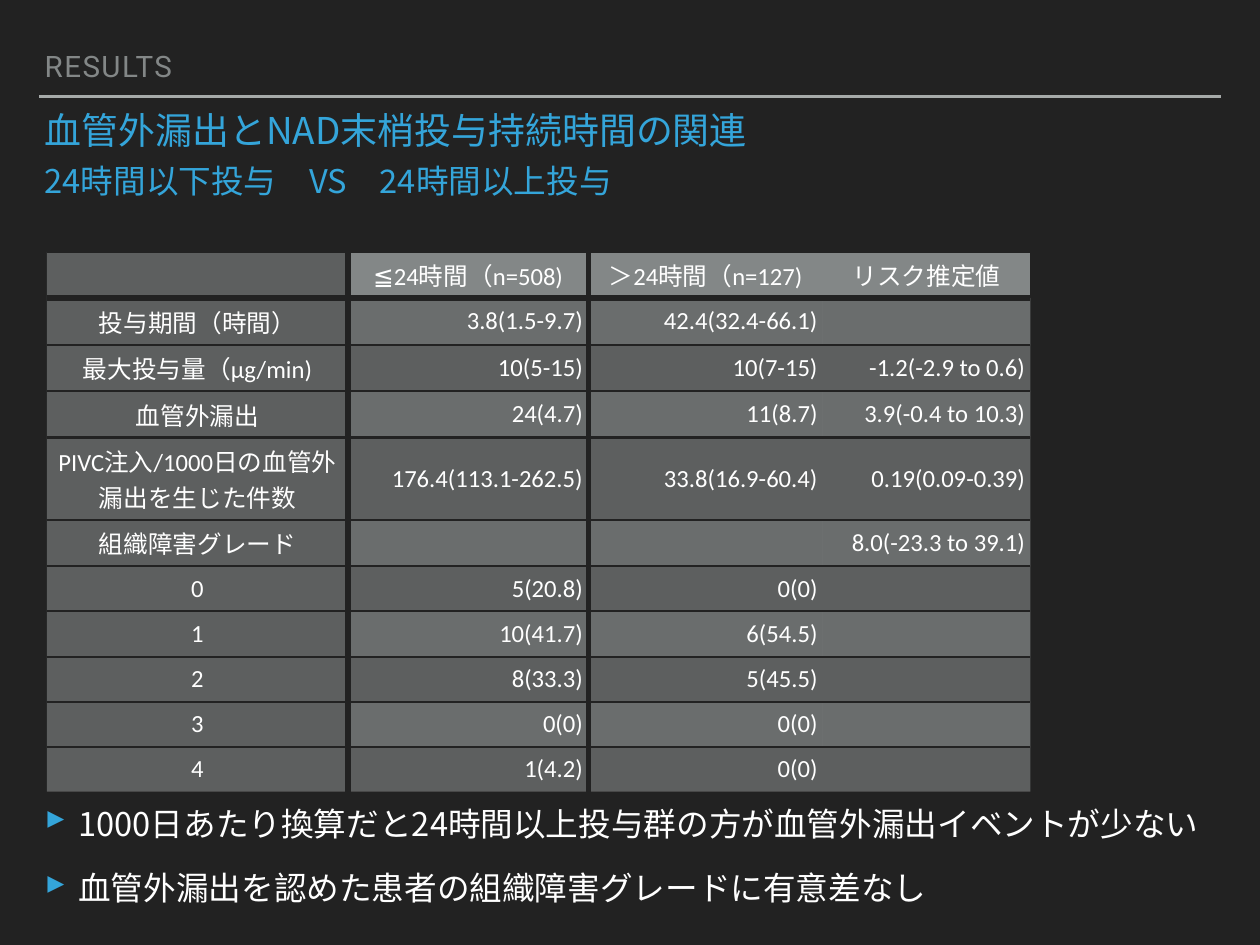
import dataclasses

import pptx
import pptx.dml.color
import pptx.enum.shapes
import pptx.enum.text
import pptx.oxml
import pptx.oxml.ns
import pptx.util
from lxml import etree

RGB = pptx.dml.color.RGBColor.from_string
Pt = pptx.util.Pt
qn = pptx.oxml.ns.qn
ALIGN = pptx.enum.text.PP_ALIGN
ANCHOR = pptx.enum.text.MSO_ANCHOR


@dataclasses.dataclass(frozen=True)
class Theme:
    """Colours, fonts and type sizes."""
    back: str = "222222"
    rule: str = "A6AAA9"
    grey: str = "838787"
    dark: str = "686A6A"
    blue: str = "34A5DA"
    white: str = "FFFFFF"
    sans: str = "Noto Sans CJK JP"
    label: str = "Roboto"
    data: str = "Calibri"
    head: float = 30
    body: float = 26.5
    small: float = 24
    cell: float = 20
    inset: float = 0.06


class Deck:
    """Draws elements on a slide grid of 32 columns by 24 rows."""

    def __init__(self, theme):
        """Open a deck with one title-only slide."""
        self.theme = theme
        self.prs = pptx.Presentation()
        self.prs.slide_width = pptx.util.Inches(14.22)
        self.prs.slide_height = pptx.util.Inches(10.67)
        self.slide = self.prs.slides.add_slide(self.prs.slide_layouts[5])
        fill = self.slide.background.fill
        fill.solid()
        fill.fore_color.rgb = RGB(theme.back)

    def x(self, cols):
        """Turn columns into a length."""
        return round(self.prs.slide_width * cols / 32)

    def y(self, rows):
        """Turn rows into a length."""
        return round(self.prs.slide_height * rows / 24)

    def box(self, col, row, wide, high):
        """Turn a grid area into left, top, width and height."""
        return self.x(col), self.y(row), self.x(wide), self.y(high)

    def style(self, para, size, color, face):
        """Set the font of a paragraph and return its properties."""
        font = para.font
        font.size, font.name = Pt(size), face
        font.color.rgb = RGB(color)
        props = para._p.get_or_add_pPr().find(qn("a:defRPr"))
        etree.SubElement(props, qn("a:ea"), typeface=self.theme.sans)
        return props

    def frame(self, shape, anchor):
        """Prepare the text frame of a shape."""
        frame = shape.text_frame
        frame.word_wrap = True
        frame.auto_size = pptx.enum.text.MSO_AUTO_SIZE.NONE
        frame.vertical_anchor = anchor
        inset = pptx.util.Inches(self.theme.inset)
        frame.margin_left = frame.margin_right = inset
        frame.margin_top = frame.margin_bottom = inset
        return frame

    def title(self, area, lines, sizes):
        """Place the title, one size for each line."""
        shape = self.slide.shapes.title
        shape.left, shape.top, shape.width, shape.height = self.box(*area)
        frame = self.frame(shape, ANCHOR.TOP)
        frame.text = "\n".join(lines)
        for para, size in zip(frame.paragraphs, sizes):
            para.alignment = ALIGN.LEFT
            para.line_spacing, para.space_before = 0.8, Pt(14)
            self.style(para, size, self.theme.blue, self.theme.sans)

    def label(self, area, text):
        """Add the section label."""
        shape = self.slide.shapes.add_textbox(*self.box(*area))
        para = self.frame(shape, ANCHOR.BOTTOM).paragraphs[0]
        para.text, para.line_spacing = text, 0.8
        props = self.style(para, self.theme.small, self.theme.grey, self.theme.label)
        props.set("spc", "120")

    def rule(self, start, end, row):
        """Add a horizontal rule."""
        line = self.slide.shapes.add_connector(
            pptx.enum.shapes.MSO_CONNECTOR.STRAIGHT,
            self.x(start), self.y(row), self.x(end), self.y(row))
        line.line.color.rgb, line.line.width = RGB(self.theme.rule), Pt(2)
        etree.SubElement(line._element.spPr, qn("a:effectLst"))

    def bullets(self, area, lines):
        """Add a bulleted list."""
        shape = self.slide.shapes.add_textbox(*self.box(*area))
        frame = self.frame(shape, ANCHOR.TOP)
        frame.text = "\n".join(lines)
        indent = pptx.util.Inches(0.38)
        for para in frame.paragraphs:
            para.space_before = Pt(21)
            font = self.style(para, self.theme.body, self.theme.white, self.theme.sans)
            props = para._p.pPr
            props.set("marL", str(indent))
            props.set("indent", str(-indent))
            color = etree.Element(qn("a:buClr"))
            etree.SubElement(color, qn("a:srgbClr"), val=self.theme.blue)
            font.addprevious(color)
            font.addprevious(etree.Element(qn("a:buSzPct"), val="105000"))
            font.addprevious(etree.Element(qn("a:buChar"), char="▸"))

    def edge(self, cell, sides):
        """Draw cell borders, given as widths by side in L, R, T, B order."""
        props = cell._tc.get_or_add_tcPr()
        for spot, (side, width) in enumerate(sides.items()):
            line = etree.Element(qn("a:ln" + side), w=str(Pt(width)))
            fill = etree.SubElement(line, qn("a:solidFill"))
            etree.SubElement(fill, qn("a:srgbClr"), val=self.theme.back)
            props.insert(spot, line)

    def paint(self, cell, color, alpha):
        """Fill a cell with a colour at a percentage of opacity."""
        cell.fill.solid()
        cell.fill.fore_color.rgb = RGB(color)
        tint = cell._tc.tcPr.find(".//" + qn("a:srgbClr"))
        etree.SubElement(tint, qn("a:alpha"), val=str(alpha * 1000))

    def table(self, spot, cols, rows, data):
        """Add a table with a header row and a header column."""
        area = self.box(*spot, sum(cols), sum(rows))
        grid = self.slide.shapes.add_table(len(rows), len(cols), *area).table
        grid._tbl.tblPr.find(qn("a:tableStyleId")).text = (
            "{2D5ABB26-0587-4C30-8999-92F81FD0307C}")
        for col, wide in zip(grid.columns, cols):
            col.width = self.x(wide)
        for row, high in zip(grid.rows, rows):
            row.height = self.y(high)
        for r, texts in enumerate(data):
            for c, text in enumerate(texts):
                self.cell(grid.cell(r, c), r, c, text, r == len(data) - 1)

    def cell(self, cell, r, c, text, last):
        """Write and format one table cell."""
        theme = self.theme
        inset = pptx.util.Inches(theme.inset)
        cell.margin_left = cell.margin_right = inset
        cell.margin_top = cell.margin_bottom = inset
        cell.vertical_anchor = ANCHOR.MIDDLE
        para = cell.text_frame.paragraphs[0]
        para.text = text
        para.alignment = ALIGN.CENTER if r == 0 or c == 0 else ALIGN.RIGHT
        self.style(para, theme.cell, theme.white, theme.data)
        if c == 0 or (r > 0 and r % 2 == 0):
            self.paint(cell, theme.dark, 85)
        else:
            self.paint(cell, theme.grey, 75 if r else 100)
        sides = {"R": 5} if c == 0 else {"L": 5} if c == 1 else {}
        sides["T"] = 5 if r == 1 else 2
        if not last:
            sides["B"] = 2 if r else 5
        self.edge(cell, sides)


def main():
    """Build the results slide."""
    theme = Theme()
    deck = Deck(theme)
    deck.rule(1, 31, 2.45)
    deck.label((1, 1.13, 27.5, 1.13), "RESULTS")
    deck.title((1, 2.81, 30, 3.02),
               ["血管外漏出とNAD末梢投与持続時間の関連", "24時間以下投与　VS　24時間以上投与"],
               [theme.head, theme.body])
    deck.bullets((1, 20.27, 30, 4.43),
                 ["1000日あたり換算だと24時間以上投与群の方が血管外漏出イベントが少ない",
                  "血管外漏出を認めた患者の組織障害グレードに有意差なし"])
    deck.table((1.19, 6.39), [7.65, 6.1, 5.96, 5.27],
               [1.17, 1.19, 1.15, 1.15, 2.09] + [1.15] * 5 + [1.13], [
        ["", "≦24時間（n=508)", "＞24時間（n=127)", "リスク推定値"],
        ["投与期間（時間）", "3.8(1.5-9.7)", "42.4(32.4-66.1)", ""],
        ["最大投与量（μg/min)", "10(5-15)", "10(7-15)", "-1.2(-2.9 to 0.6)"],
        ["血管外漏出", "24(4.7)", "11(8.7)", "3.9(-0.4 to 10.3)"],
        ["PIVC注入/1000日の血管外漏出を生じた件数", "176.4(113.1-262.5)",
         "33.8(16.9-60.4)", "0.19(0.09-0.39)"],
        ["組織障害グレード", "", "", "8.0(-23.3 to 39.1)"],
        ["0", "5(20.8)", "0(0)", ""],
        ["1", "10(41.7)", "6(54.5)", ""],
        ["2", "8(33.3)", "5(45.5)", ""],
        ["3", "0(0)", "0(0)", ""],
        ["4", "1(4.2)", "0(0)", ""],
    ])
    deck.prs.save("out.pptx")


if __name__ == "__main__":
    main()
